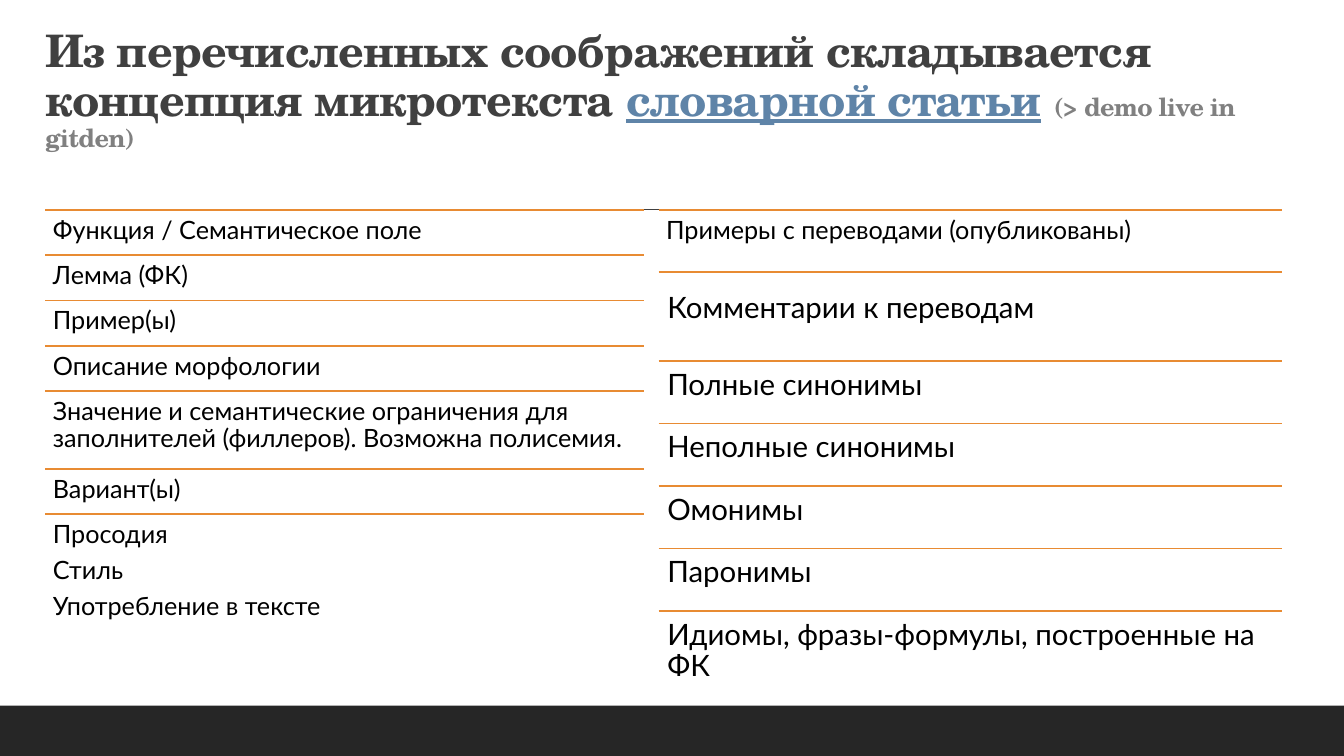
from dataclasses import dataclass

from lxml import etree
from pptx import Presentation
from pptx.dml.color import RGBColor
from pptx.enum.shapes import MSO_CONNECTOR, MSO_SHAPE
from pptx.enum.text import MSO_ANCHOR
from pptx.oxml.ns import qn
from pptx.util import Pt

STRAIGHT = MSO_CONNECTOR.STRAIGHT
RECT = MSO_SHAPE.RECTANGLE
TOP = MSO_ANCHOR.TOP
BOTTOM = MSO_ANCHOR.BOTTOM


@dataclass(frozen=True)
class Theme:
    head: str = "TeX Gyre Schola"
    body: str = "Lato"
    dark: str = "404040"
    grey: str = "808080"
    blue: str = "5F84A8"
    rule: str = "E88B33"
    foot: str = "262626"
    ink: str = "000000"
    title: int = 32
    large: int = 21
    small: int = 18


def write(para, text, font, size, color, bold=False, under=False, space=None):
    run = para.add_run()
    run.text = text
    run.font.name = font
    run.font.size = Pt(size)
    run.font.bold = bold
    run.font.underline = under
    run.font.color.rgb = RGBColor.from_string(color)
    if space is not None:
        run.font._element.set("spc", str(round(space * 100)))


class Deck:
    def __init__(self, theme):
        self.theme = theme
        self.show = Presentation()
        self.show.slide_width = Pt(960)
        self.show.slide_height = Pt(540)
        self.slide = self.show.slides.add_slide(self.show.slide_layouts[6])

    def bar(self, left, top, width, height, color):
        shape = self.slide.shapes.add_shape(
            RECT, Pt(left), Pt(top), Pt(width), Pt(height))
        shape.shadow.inherit = False
        shape.fill.solid()
        shape.fill.fore_color.rgb = RGBColor.from_string(color)
        shape.line.fill.background()

    def line(self, left, top, width, color, weight):
        line = self.slide.shapes.add_connector(
            STRAIGHT, Pt(left), Pt(top), Pt(left + width), Pt(top))
        line.line.color.rgb = RGBColor.from_string(color)
        line.line.width = Pt(weight)
        etree.SubElement(line._element.spPr, qn("a:effectLst"))

    def box(self, left, top, width, height, inset, anchor=TOP):
        shape = self.slide.shapes.add_textbox(
            Pt(left), Pt(top), Pt(width), Pt(height))
        frame = shape.text_frame
        frame.word_wrap = True
        frame.vertical_anchor = anchor
        frame.margin_left = frame.margin_right = Pt(inset[0])
        frame.margin_top = frame.margin_bottom = Pt(inset[1])
        return frame

    def title(self, left, top, width, height, parts):
        frame = self.box(left, top, width, height, (7.2, 3.6), BOTTOM)
        para = frame.paragraphs[0]
        para.line_spacing = 0.9
        for text, style in parts:
            base = dict(font=self.theme.head, size=self.theme.title,
                        color=self.theme.dark, bold=True, space=-0.5)
            write(para, text, **(base | style))

    def cell(self, left, top, width, height, lines, size):
        frame = self.box(left, top, width, height, (0.3 * size, 0.3 * size))
        for index, text in enumerate(lines):
            para = frame.add_paragraph() if index else frame.paragraphs[0]
            para.line_spacing = 0.9
            para.space_after = Pt(0.35 * size)
            write(para, text, font=self.theme.body, size=size,
                  color=self.theme.ink)

    def column(self, left, top, width, rows):
        for height, drop, size, lines in rows:
            self.line(left, top, width, self.theme.rule, 1.25)
            self.cell(left, top + drop, width, height, lines, size)
            top += height + drop


def main():
    theme = Theme()
    deck = Deck(theme)
    small, large = theme.small, theme.large
    top, short, tall = 149.8, 32.4, 44.64

    deck.bar(0, 504, 960, 36, theme.foot)
    deck.line(94.3, top, 784.8, theme.dark, 1)
    deck.title(25.2, 30.2, 889.9, 82.8, [
        ("Из перечисленных соображений складывается концепция микротекста ", {}),
        ("словарной статьи", dict(color=theme.blue, under=True)),
        (" ", {}),
        ("(> demo live in gitden)", dict(size=small, color=theme.grey)),
    ])

    deck.column(32.4, top, 427.7, [
        (short, 0, small, ["Функция / Семантическое поле"]),
        (short, 0, small, ["Лемма (ФК)"]),
        (short, 0, small, ["Пример(ы)"]),
        (short, 0, small, ["Описание морфологии"]),
        (55.4, 0, small, ["Значение и семантические ограничения для "
                          "заполнителей (филлеров). Возможна полисемия."]),
        (short, 0, small, ["Вариант(ы)"]),
        (113.8, 0, small, ["Просодия", "Стиль", "Употребление в тексте"]),
    ])

    deck.column(470.4, top, 445.2, [
        (tall, 0, small, ["Примеры с переводами (опубликованы)"]),
        (54.8, 8.6, large, ["Комментарии к переводам"]),
        (tall, 0, large, ["Полные синонимы"]),
        (tall, 0, large, ["Неполные синонимы"]),
        (tall, 0, large, ["Омонимы"]),
        (tall, 0, large, ["Паронимы"]),
        (tall, 0, large, ["Идиомы, фразы-формулы, построенные на ФК"]),
    ])
    deck.show.save("out.pptx")


if __name__ == "__main__":
    main()
